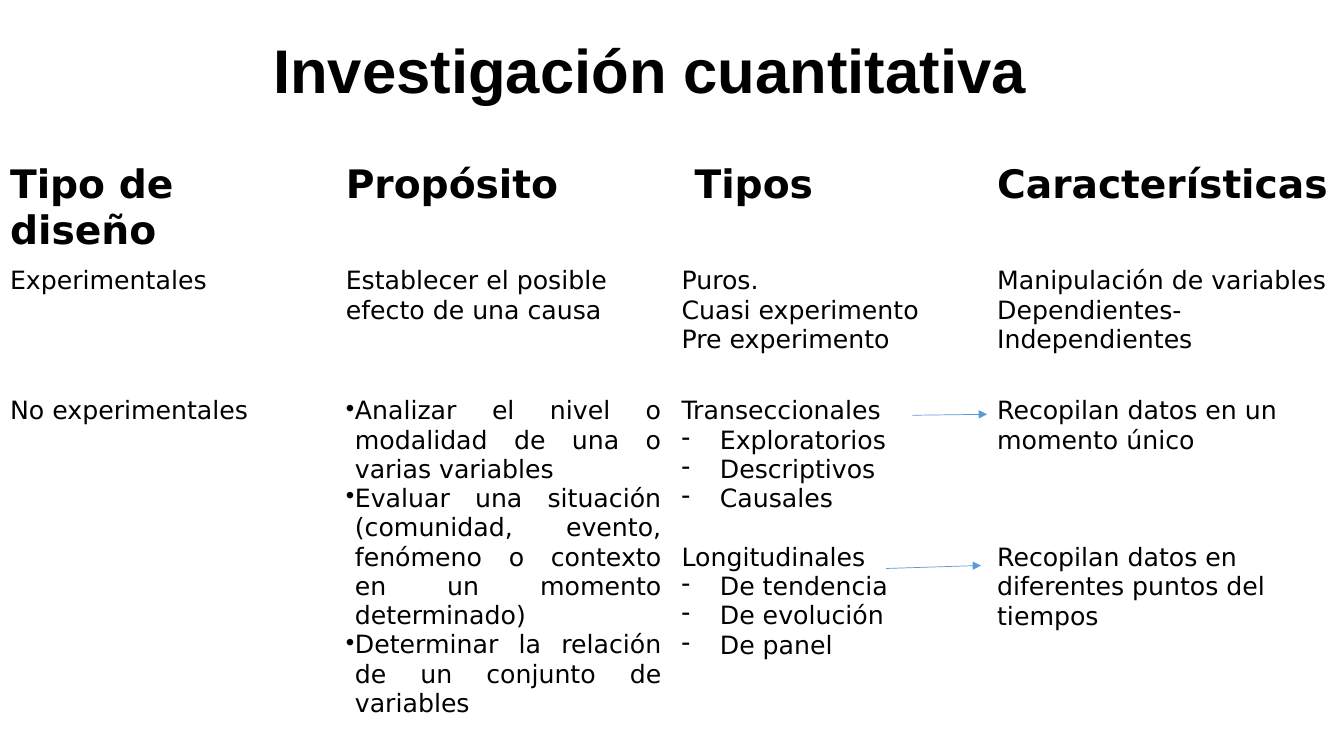
from lxml import etree
from pptx import Presentation
from pptx.dml.color import RGBColor
from pptx.enum.shapes import MSO_CONNECTOR
from pptx.enum.text import MSO_ANCHOR, PP_ALIGN
from pptx.oxml.ns import qn
from pptx.util import Inches, Pt

STRAIGHT = MSO_CONNECTOR.STRAIGHT
MIDDLE = MSO_ANCHOR.MIDDLE
CENTER, LEFT, JUSTIFY = PP_ALIGN.CENTER, PP_ALIGN.LEFT, PP_ALIGN.JUSTIFY

BLACK, BLUE = "000000", "5B9BD5"
TITLE = {"name": "Arial", "size": Pt(44), "bold": True}
HEAD = {"name": "DejaVu Sans", "size": Pt(28), "bold": True}
BODY = {"name": "DejaVu Sans", "size": Pt(18), "bold": False}
LINE = 21  # height of one body line, in points

# Paragraph styles: alignment, left margin, first-line indent, bullet
PLAIN = (LEFT, 0, 0, None)
NUDGE = (LEFT, 0.13, 0, None)
DOT = (JUSTIFY, 0.09, -0.09, "•")
DASH = (LEFT, 0.38, -0.38, "-")

COLS = [3.33, 3.33, 3.13, 3.53]
ROWS = [0.75, 1.29, 2.46, 1.57]


def paras(style, *texts, gap=0):
    """Give texts one style; gap is the space in lines before the first."""
    return [(text, style, 0 if i else gap) for i, text in enumerate(texts)]


GRID = [
    [
        paras(PLAIN, "Tipo de diseño"),
        paras(PLAIN, "Propósito"),
        paras(NUDGE, "Tipos"),
        paras(PLAIN, "Características"),
    ],
    [
        paras(PLAIN, "Experimentales"),
        paras(PLAIN, "Establecer el posible efecto de una causa"),
        paras(PLAIN, "Puros.", "Cuasi experimento", "Pre experimento"),
        paras(PLAIN, "Manipulación de variables", "Dependientes-Independientes"),
    ],
    [
        paras(PLAIN, "No experimentales"),
        paras(
            DOT,
            "Analizar el nivel o modalidad de una o varias variables",
            "Evaluar una situación (comunidad, evento, fenómeno o contexto "
            "en un momento determinado)",
            "Determinar la relación de un conjunto de variables",
        ),
        paras(PLAIN, "Transeccionales")
        + paras(DASH, "Exploratorios", "Descriptivos", "Causales")
        + paras(PLAIN, "Longitudinales", gap=1)
        + paras(DASH, "De tendencia", "De evolución", "De panel"),
        paras(PLAIN, "Recopilan datos en un momento único")
        + paras(PLAIN, "Recopilan datos en diferentes puntos del tiempos", gap=3),
    ],
    [[], [], [], []],
]


def color(code):
    return RGBColor.from_string(code)


def write(para, text, look):
    run = para.add_run()
    run.text = text
    for key, value in look.items():
        setattr(run.font, key, value)
    run.font.color.rgb = color(BLACK)


def shape_para(para, style, gap):
    """Set alignment, indents, bullet and space before."""
    para.alignment, margin, indent, mark = style
    if gap:
        para.space_before = Pt(gap * LINE)
    props = para._p.get_or_add_pPr()
    props.set("marL", str(Inches(margin)))
    props.set("indent", str(Inches(indent)))
    if mark:
        etree.SubElement(props, qn("a:buChar")).set("char", mark)


def add_title(slide, left, top, width, height):
    box = slide.shapes.add_textbox(*map(Inches, (left, top, width, height)))
    frame = box.text_frame
    frame.word_wrap = True
    frame.vertical_anchor = MIDDLE
    para = frame.paragraphs[0]
    para.alignment = CENTER
    para.line_spacing = 0.9
    write(para, "Investigación cuantitativa", TITLE)


def fill_cell(cell, items, look):
    cell.fill.background()
    frame = cell.text_frame
    for i, (text, style, gap) in enumerate(items):
        para = frame.add_paragraph() if i else frame.paragraphs[0]
        shape_para(para, style, gap)
        write(para, text, look)


def add_grid(slide, left, top):
    size = (left, top, sum(COLS), sum(ROWS))
    table = slide.shapes.add_table(
        len(ROWS), len(COLS), *map(Inches, size)).table
    table.first_row = table.horz_banding = False
    for col, width in zip(table.columns, COLS):
        col.width = Inches(width)
    for r, (row, height) in enumerate(zip(table.rows, ROWS)):
        row.height = Inches(height)
        for cell, items in zip(row.cells, GRID[r]):
            fill_cell(cell, items, BODY if r else HEAD)


def add_arrow(slide, left, base, width, rise):
    ends = (left, base, left + width, base - rise)
    arrow = slide.shapes.add_connector(STRAIGHT, *map(Inches, ends))
    arrow.line.color.rgb = color(BLUE)
    arrow.line.width = Pt(0.5)
    etree.SubElement(arrow.line._ln, qn("a:tailEnd")).set("type", "triangle")
    etree.SubElement(arrow._element.spPr, qn("a:effectLst"))


def main():
    deck = Presentation()
    deck.slide_width, deck.slide_height = Inches(13.33), Inches(7.5)
    slide = deck.slides.add_slide(deck.slide_layouts[6])
    add_title(slide, 0.7, 0, 11.5, 1.45)
    add_grid(slide, 0, 1.56)
    add_arrow(slide, 9.05, 4.12, 0.74, 0.01)
    add_arrow(slide, 8.79, 5.64, 0.94, 0.03)
    deck.save("out.pptx")


if __name__ == "__main__":
    main()
